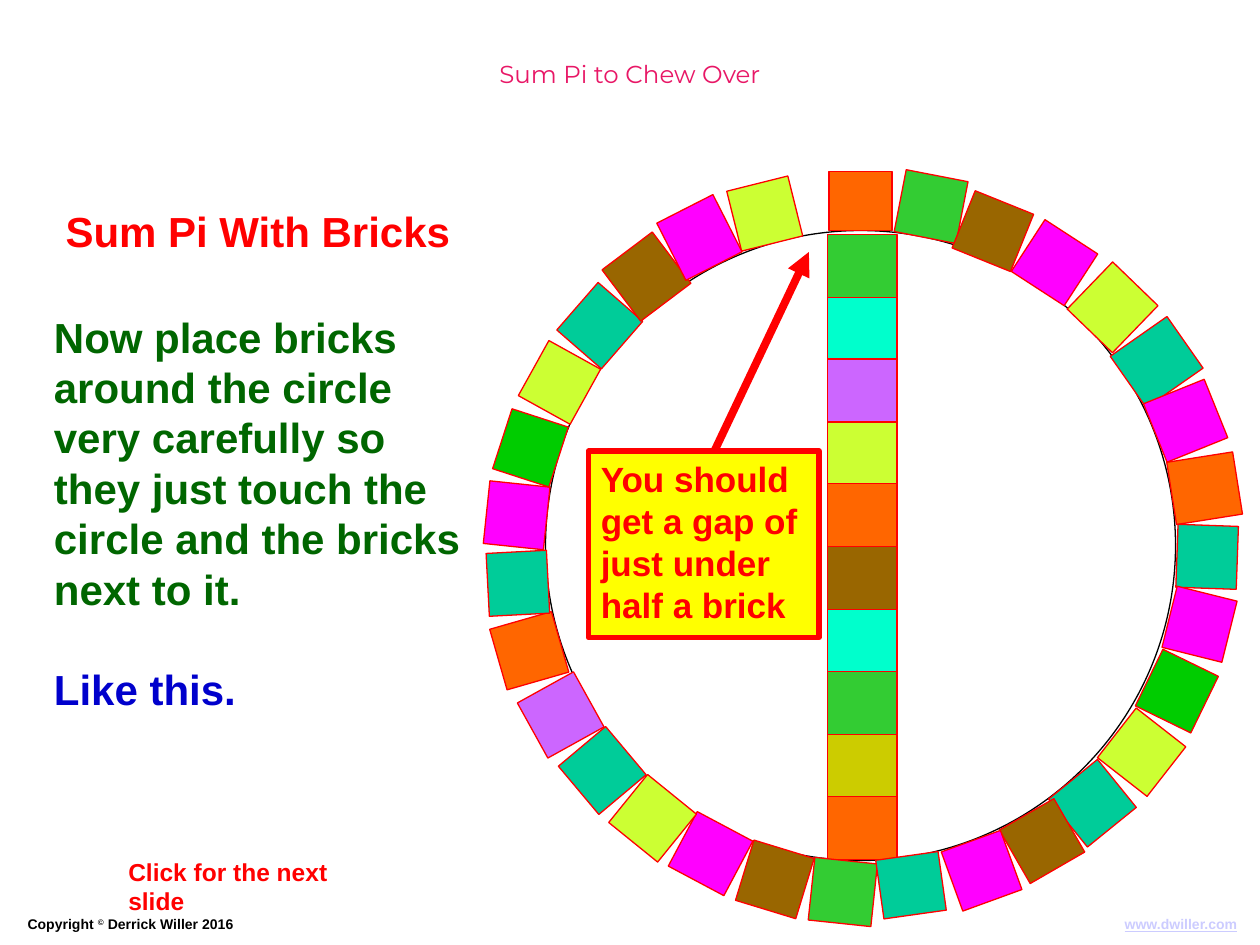
from lxml.etree import SubElement
from pptx import Presentation
from pptx.dml.color import RGBColor
from pptx.enum.shapes import MSO_CONNECTOR, MSO_SHAPE
from pptx.enum.text import MSO_ANCHOR, MSO_AUTO_SIZE, PP_ALIGN
from pptx.oxml.ns import qn
from pptx.util import Emu, Pt

SCALE = 9144
COLORS = {
    "black": "000000", "white": "FFFFFF", "red": "FF0000", "yellow": "FFFF00",
    "navy": "0000CC", "forest": "006600", "pink": "E81766", "link": "CCCCFF",
    "green": "33CC33", "emerald": "00CC00", "cyan": "00FFCC", "teal": "00CC99",
    "violet": "CC66FF", "lime": "CCFF33", "orange": "FF6600", "brown": "996600",
    "magenta": "FF00FF", "olive": "CCCC00",
}
DIAMETER_BRICKS = ["green", "cyan", "violet", "lime", "orange",
                   "brown", "cyan", "green", "olive", "orange"]
RING_BRICKS = [
    (714, 139, 50, 11, "green"), (763, 159, 49, 22, "brown"),
    (812, 184, 49, 33, "magenta"), (858, 218, 52, 44, "lime"),
    (893, 260, 55, 55, "teal"), (916, 308, 52, 68, "magenta"),
    (931, 361, 53, 81, "orange"), (933, 418, 48, 92, "teal"),
    (927, 471, 49, 104, "magenta"), (909, 524, 49, 116, "emerald"),
    (881, 572, 50, 128, "lime"), (842, 613, 49, 141, "teal"),
    (802, 643, 49, 150, "brown"), (754, 666, 50, 160, "magenta"),
    (644, 683, 50, 6, "green"), (590, 673, 50, 17, "brown"),
    (539, 653, 49, 28, "magenta"), (493, 625, 49, 39, "lime"),
    (453, 587, 49, 50, "teal"), (420, 542, 51, 61, "violet"),
    (395, 491, 51, 74, "orange"), (386, 439, 48, 87, "teal"),
    (385, 385, 48, 96, "magenta"), (396, 332, 47, 108, "emerald"),
    (419, 280, 47, 119, "lime"), (451, 235, 47, 131, "teal"),
    (488, 194, 51, 143, "brown"), (530, 163, 51, 153, "magenta"),
    (698, 679, 47, 172, "teal"), (582, 145, 49, 346, "lime"),
    (658, 136, 47, 0, "orange"),
]


def px(n):
    """Turn px into EMU."""
    return Emu(n * SCALE)


def rgb(name):
    """Look up a named colour."""
    return RGBColor.from_string(COLORS[name])


def add_text(p, text, size=24, color="red", font="Arial", bold=True,
             underline=None, baseline=None):
    """Append a formatted run to a paragraph."""
    r = p.add_run()
    r.text = text
    f = r.font
    f.size, f.name, f.bold, f.underline = Pt(size), font, bold, underline
    f.color.rgb = rgb(color)
    if baseline:
        r._r.get_or_add_rPr().set("baseline", str(baseline))


def set_frame(sp, align=PP_ALIGN.LEFT, wrap=True, spacing=None):
    """Prepare the text frame of a shape and return its first paragraph."""
    tf = sp.text_frame
    tf.word_wrap = wrap
    tf.auto_size = MSO_AUTO_SIZE.NONE
    tf.vertical_anchor = MSO_ANCHOR.TOP
    p = tf.paragraphs[0]
    p.alignment = align
    if spacing:
        p.line_spacing = Pt(spacing)
    return p


def add_box(s, x, y, w, h, **frame):
    """Add a text box and return its first paragraph."""
    return set_frame(s.shapes.add_textbox(px(x), px(y), px(w), px(h)), **frame)


def add_shape(s, x, y, w, h, kind=MSO_SHAPE.RECTANGLE, fill=None,
              line="red", width=0.75, rotation=0):
    """Add a flat preset shape."""
    sp = s.shapes.add_shape(kind, px(x), px(y), px(w), px(h))
    sp.shadow.inherit = False
    sp.rotation = rotation
    if fill:
        sp.fill.solid()
        sp.fill.fore_color.rgb = rgb(fill)
    else:
        sp.fill.background()
    if line:
        sp.line.color.rgb = rgb(line)
        sp.line.width = Pt(width)
    else:
        sp.line.fill.background()
    return sp


def add_arrow(s, x1, y1, x2, y2, color="red", width=4.5):
    """Add a straight arrow pointing at its second end."""
    c = s.shapes.add_connector(MSO_CONNECTOR.STRAIGHT, px(x1), px(y1), px(x2), px(y2))
    c.line.color.rgb = rgb(color)
    c.line.width = Pt(width)
    SubElement(c.line._get_or_add_ln(), qn("a:tailEnd"), type="triangle")
    SubElement(c._element.spPr, qn("a:effectLst"))


def add_title(s):
    """Place and format the slide title."""
    sp = s.shapes.title
    sp.left, sp.top, sp.width, sp.height = px(42), px(158), px(326), px(50)
    add_text(set_frame(sp, wrap=False), "Sum Pi With Bricks")


def add_header_footer(s):
    """Add the series name, copyright line and web address."""
    p = add_box(s, 350, 42, 300, 58, align=PP_ALIGN.CENTER)
    add_text(p, "Sum Pi to Chew Over", size=14, color="pink", font="Montserrat", bold=False)
    p = add_box(s, 12, 722, 565, 24)
    add_text(p, "Copyright ", size=8, color="black")
    add_text(p, "©", size=8, color="black", baseline=30000)
    add_text(p, " Derrick Willer 2016", size=8, color="black")
    p = add_box(s, 858, 722, 134, 24, align=PP_ALIGN.RIGHT)
    add_text(p, "www.dwiller.com", size=8, color="link", underline=True)


def add_bricks(s):
    """Draw the circle with bricks along its diameter and rim."""
    add_shape(s, 433, 183, 500, 500, kind=MSO_SHAPE.OVAL, line="black")
    for i, color in enumerate(DIAMETER_BRICKS):
        add_shape(s, 657, round(186 + 49.6 * i), 55, 50, fill=color)
    for x, y, h, rotation, color in RING_BRICKS:
        add_shape(s, x, y, 50, h, fill=color, rotation=rotation)


def add_instructions(s):
    """Add the steps, the gap callout and the prompt."""
    p = add_box(s, 33, 242, 343, 330, spacing=28.8)
    add_text(p, "Now place bricks around the circle very carefully so they just "
                "touch the circle and the bricks next to it.", color="forest")
    p = s.shapes[-1].text_frame.add_paragraph()
    p.line_spacing = p.space_before = Pt(28.8)
    add_text(p, "Like this.", color="navy")

    sp = add_shape(s, 467, 358, 183, 148, fill="yellow", width=3)
    add_text(set_frame(sp, spacing=24),
             "You should get a gap of just under half a brick", size=20)
    add_arrow(s, 567, 358, 642, 200)

    sp = add_shape(s, 92, 675, 227, 33, fill="white", line=None)
    add_text(set_frame(sp), "Click for the next slide", size=14)


def main():
    """Build and save the slide."""
    prs = Presentation()
    prs.slide_width, prs.slide_height = px(1000), px(750)
    s = prs.slides.add_slide(prs.slide_layouts[5])
    add_title(s)
    add_header_footer(s)
    add_bricks(s)
    add_instructions(s)
    prs.save("out.pptx")


if __name__ == "__main__":
    main()
